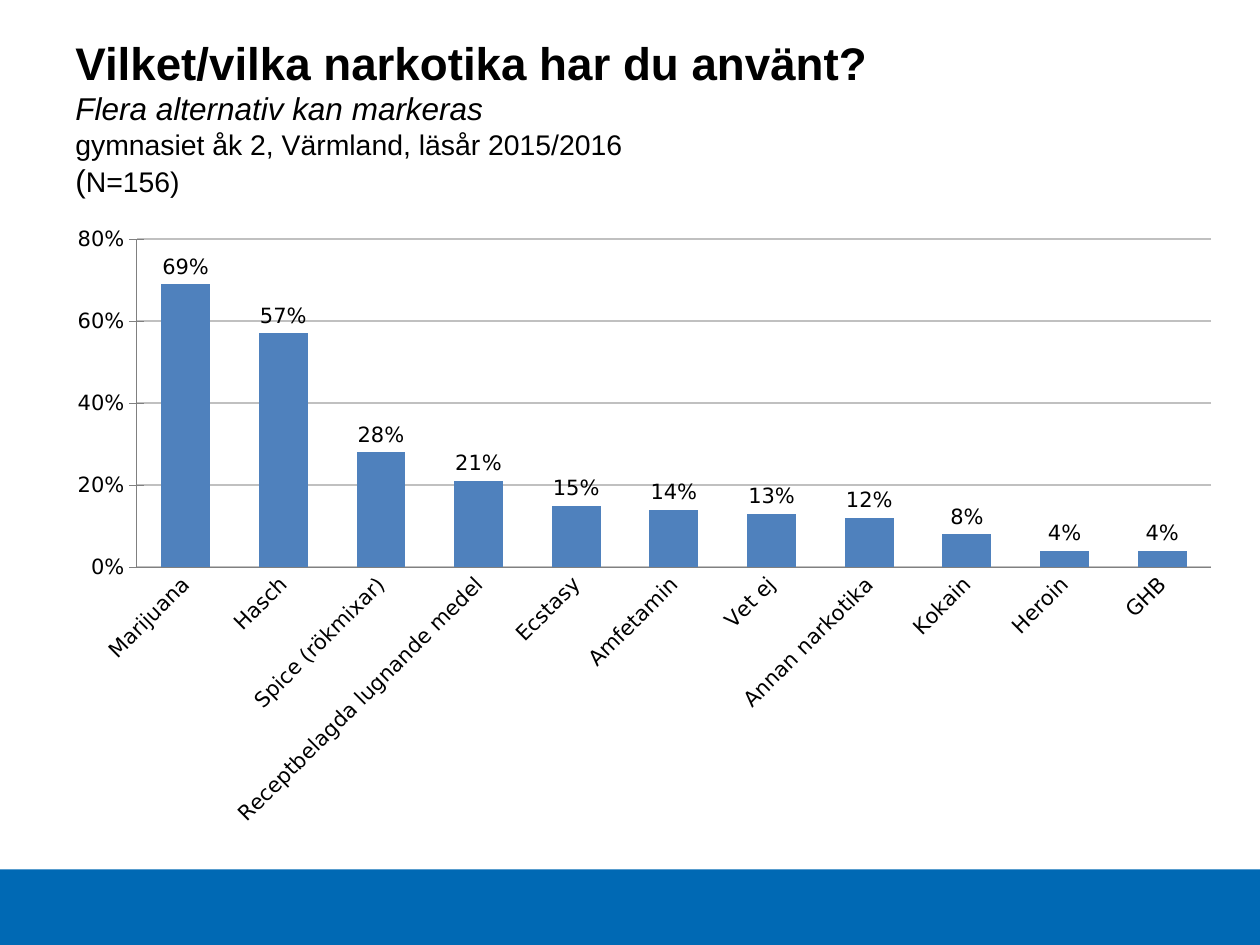
from lxml.etree import SubElement
from pptx import Presentation
from pptx.chart.data import CategoryChartData
from pptx.dml.color import RGBColor
from pptx.enum.chart import XL_CHART_TYPE, XL_LABEL_POSITION, XL_TICK_MARK
from pptx.enum.shapes import MSO_SHAPE
from pptx.enum.text import MSO_ANCHOR
from pptx.oxml.ns import qn
from pptx.util import Inches, Pt

COLORS = {"band": "0069B4", "bar": "4F81BD", "grid": "C0C0C0", "axis": "808080", "text": "000000"}
CHART_FONT = "DejaVu Sans"


def color(name):
    return RGBColor.from_string(COLORS[name])


def style_font(font, name, size):
    font.name = name
    font.size = Pt(size)
    font.color.rgb = color("text")


prs = Presentation()
prs.slide_width = Inches(10)
prs.slide_height = Inches(7.5)
slide = prs.slides.add_slide(prs.slide_layouts[6])

# Footer band
band = slide.shapes.add_shape(MSO_SHAPE.RECTANGLE, Inches(0), Inches(6.9), Inches(10), Inches(0.6))
band.shadow.inherit = False
band.fill.solid()
band.fill.fore_color.rgb = color("band")
band.line.fill.background()

# Heading: one paragraph, each line made of (text, size, bold, italic) runs
heading_lines = [
    [("Vilket/vilka narkotika har du använt?", 26.1, True, False)],
    [("Flera alternativ kan markeras", 18, False, True)],
    [("gymnasiet åk 2, Värmland, läsår 2015/2016", 16.2, False, False)],
    [("(", 18, False, False), ("N=156)", 16.2, False, False)],
]
heading = slide.shapes.add_textbox(Inches(0.5), Inches(0.3), Inches(8.66), Inches(1.25)).text_frame
heading.word_wrap = True
heading.vertical_anchor = MSO_ANCHOR.MIDDLE
paragraph = heading.paragraphs[0]
for index, line in enumerate(heading_lines):
    if index:
        paragraph.add_line_break()
    for text, size, bold, italic in line:
        run = paragraph.add_run()
        run.text = text
        style_font(run.font, "Arial", size)
        run.font.bold = bold
        run.font.italic = italic

# Share of students per drug
shares = {
    "Marijuana": 0.69,
    "Hasch": 0.57,
    "Spice (rökmixar)": 0.28,
    "Receptbelagda lugnande medel": 0.21,
    "Ecstasy": 0.15,
    "Amfetamin": 0.14,
    "Vet ej": 0.13,
    "Annan narkotika": 0.12,
    "Kokain": 0.08,
    "Heroin": 0.04,
    "GHB": 0.04,
}
data = CategoryChartData(number_format="0%")
data.categories = list(shares)
data.add_series("Series 1", list(shares.values()))
chart = slide.shapes.add_chart(
    XL_CHART_TYPE.COLUMN_CLUSTERED, Inches(0.43), Inches(1.7), Inches(9.37), Inches(4.96), data
).chart
chart.has_legend = False
chart.has_title = False
style_font(chart.font, CHART_FONT, 12)

plot = chart.plots[0]
plot.gap_width = 100
plot.vary_by_categories = False
bars = plot.series[0].format.fill
bars.solid()
bars.fore_color.rgb = color("bar")

plot.has_data_labels = True
labels = plot.data_labels
labels.show_value = True
labels.number_format = "0%"
labels.number_format_is_linked = False
labels.position = XL_LABEL_POSITION.OUTSIDE_END
style_font(labels.font, CHART_FONT, 12)

drug_axis, share_axis = chart.category_axis, chart.value_axis
for axis in (drug_axis, share_axis):
    style_font(axis.tick_labels.font, CHART_FONT, 12)
    axis.format.line.color.rgb = color("axis")
    axis.format.line.width = Pt(0.75)

drug_axis.major_tick_mark = XL_TICK_MARK.NONE
drug_axis.has_major_gridlines = False
label_body = drug_axis._element.find(qn("c:txPr")).find(qn("a:bodyPr"))
label_body.set("rot", "-2700000")
label_body.set("vert", "horz")

share_axis.minimum_scale = 0
share_axis.maximum_scale = 0.8
share_axis.major_unit = 0.2
share_axis.major_tick_mark = XL_TICK_MARK.CROSS
share_axis.tick_labels.number_format = "0%"
share_axis.tick_labels.number_format_is_linked = False
share_axis.major_gridlines.format.line.color.rgb = color("grid")
share_axis.major_gridlines.format.line.width = Pt(1)

# Fixed plot area, leaving room for the slanted labels
plot_area = chart._chartSpace.chart.plotArea
layout = plot_area.find(qn("c:layout"))
if layout is None:
    layout = SubElement(plot_area, qn("c:layout"))
    plot_area.insert(0, layout)
manual = SubElement(layout, qn("c:manualLayout"))
for tag, value in [
    ("layoutTarget", "inner"), ("xMode", "edge"), ("yMode", "edge"),
    ("x", "0.07"), ("y", "0.04"), ("w", "0.91"), ("h", "0.525"),
]:
    SubElement(manual, qn(f"c:{tag}")).set("val", value)

prs.save("out.pptx")
